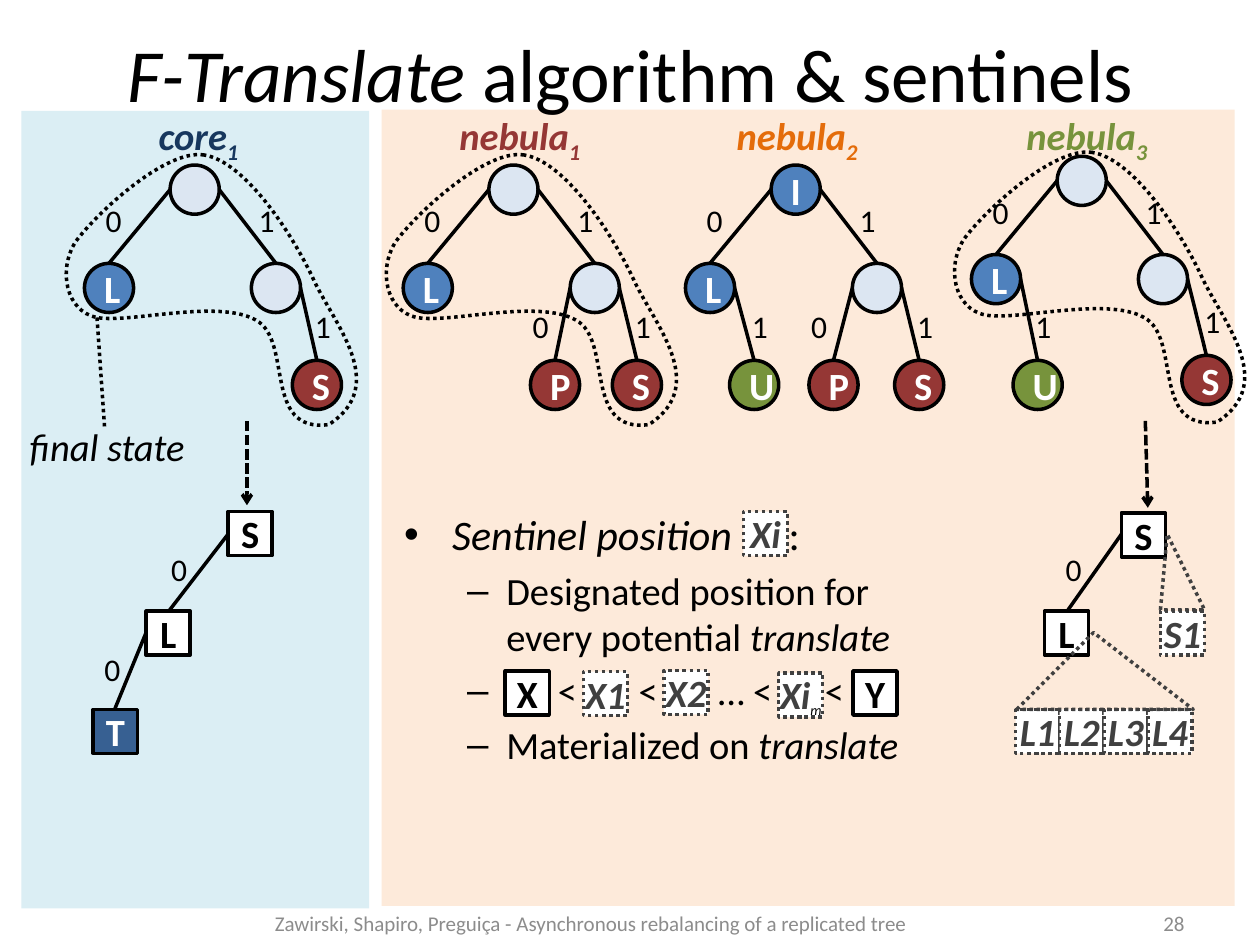
from dataclasses import dataclass

from lxml.etree import SubElement
from pptx import Presentation
from pptx.dml.color import RGBColor
from pptx.enum.dml import MSO_LINE_DASH_STYLE as Dash
from pptx.enum.shapes import MSO_CONNECTOR as Connector, MSO_SHAPE as Shape
from pptx.enum.text import MSO_ANCHOR as Anchor, MSO_AUTO_SIZE as AutoSize, PP_ALIGN as Align
from pptx.oxml.ns import qn
from pptx.util import Inches, Pt


@dataclass(frozen=True)
class Theme:
    """Colours and type sizes of the slide."""
    font: str = "Calibri"
    ink: str = "000000"
    paper: str = "FFFFFF"
    muted: str = "8C8C8C"
    core_panel: str = "DBEEF4"
    nebula_panel: str = "FDEADA"
    navy: str = "17375E"
    steel: str = "376092"
    blue: str = "4F81BD"
    pale: str = "DCE6F2"
    red: str = "953735"
    orange: str = "E46C0A"
    green: str = "77933C"
    sentinel: str = "404040"
    title: float = 42.9
    lead: float = 24
    body: float = 22
    edge: float = 18
    index: float = 14
    footer: float = 12
    stroke: float = 2


THEME = Theme()
NODE, BOX = 3.9, 3.5
NODE_COLORS = {"": THEME.pale, "L": THEME.blue, "I": THEME.blue,
               "S": THEME.red, "P": THEME.red, "U": THEME.green}
CURVE_SIZE = (23, 21.5)
FINAL_STATE = [(10.9, 0), (7.8, -.5), (2.2, 4.8), (.7, 6.9), (-.7, 9.1), (-.1, 12.4),
               (2.4, 12.9), (4.9, 13.4), (12, 11.4), (15, 13.1), (18, 14.7), (15.5, 22.1),
               (20.8, 21.4), (25.7, 18.2), (21.1, 13.3), (19.5, 9.7), (17.8, 6.1),
               (14.1, .5), (10.9, 0)]


def cells(*counts):
    """Turn columns or rows of the 100 by 75 grid into lengths."""
    return [Inches(count / 10) for count in counts]


def write(paragraph, *runs, size=THEME.body, color=THEME.ink, bold=False, italic=False,
          align=None, base=0, spread=0):
    """Add runs to a paragraph; a run is text or a pair of text and changed format."""
    paragraph.alignment = align
    for entry in runs:
        text, changes = (entry, {}) if isinstance(entry, str) else entry
        look = dict(size=size, color=color, bold=bold, italic=italic, base=base,
                    spread=spread) | changes
        run = paragraph.add_run()
        run.text = text
        font = run.font
        font.name, font.size = THEME.font, Pt(look["size"])
        font.bold, font.italic = look["bold"], look["italic"]
        font.color.rgb = RGBColor.from_string(look["color"])
        if look["base"]:
            run._r.get_or_add_rPr().set("baseline", str(look["base"] * 1000))
        if look["spread"]:
            run._r.get_or_add_rPr().set("spc", str(look["spread"] * 100))


def label(slide, area, *runs, anchor=Anchor.TOP, **look):
    """Place a text box and return its frame."""
    frame = slide.shapes.add_textbox(*cells(*area)).text_frame
    frame.word_wrap, frame.vertical_anchor = True, anchor
    write(frame.paragraphs[0], *runs, **look)
    return frame


def stroke(line, color=THEME.ink, dash=None):
    """Format an outline or a connector line."""
    line.color.rgb = RGBColor.from_string(color)
    line.width = Pt(THEME.stroke)
    if dash:
        line.dash_style = dash


def block(slide, kind, area, fill=None, line=THEME.ink, dash=None):
    """Draw a preset shape with flat fill and optional outline."""
    shape = slide.shapes.add_shape(kind, *cells(*area))
    shape.shadow.inherit = False
    if fill:
        shape.fill.solid()
        shape.fill.fore_color.rgb = RGBColor.from_string(fill)
    else:
        shape.fill.background()
    if line:
        stroke(shape.line, line, dash)
    else:
        shape.line.fill.background()
    return shape


def edge(slide, start, end, dash=None, arrow=False):
    """Connect two grid points."""
    link = slide.shapes.add_connector(Connector.STRAIGHT, *cells(*start, *end))
    stroke(link.line, dash=dash)
    if arrow:
        SubElement(link.line._get_or_add_ln(), qn("a:tailEnd"), type="arrow")
    SubElement(link._element.spPr, qn("a:effectLst"))


def node(slide, letter, x, y):
    """Draw a round tree node."""
    circle = block(slide, Shape.OVAL, (x, y, NODE, NODE), NODE_COLORS[letter])
    if letter:
        write(circle.text_frame.paragraphs[0], letter, color=THEME.paper, bold=True,
              align=Align.CENTER)


def box(slide, x, y, *runs, fill=THEME.paper, color=THEME.ink, sentinel=False):
    """Draw a square position, dotted when it is a sentinel."""
    ink = THEME.sentinel if sentinel else color
    square = block(slide, Shape.RECTANGLE, (x, y, BOX, BOX), fill,
                   THEME.sentinel if sentinel else THEME.ink,
                   Dash.ROUND_DOT if sentinel else None)
    frame = square.text_frame
    frame.margin_left = frame.margin_right = 0
    write(frame.paragraphs[0], *runs, color=ink, bold=True, italic=sentinel, align=Align.CENTER)


def bit(slide, digit, x, y):
    """Label an edge with its bit."""
    label(slide, (x, y, 3.4, 4), digit, size=THEME.edge)


def leaf(slide, letter, digit, parent, x, y):
    """Hang a leaf from the side of its parent that the bit selects."""
    side = NODE if digit == "1" else 0
    edge(slide, (parent[0] + side, parent[1] + NODE / 2), (x + NODE / 2, y))
    node(slide, letter, x, y)
    bit(slide, digit, x + (.8 if side else -.8), y - 4.7)


def tree(slide, x, y, leaves, root="", outline=None):
    """Draw a tree from its root; leaves map a letter to its offset from the root."""
    left, right = (x - 6.8, y + 7.8), (x + 6.45, y + 7.8)
    for digit, child, start, shift in (("0", left, x, .7), ("1", right, x + NODE, -.4)):
        edge(slide, (start, y + NODE / 2), (child[0] + NODE / 2, child[1]))
        bit(slide, digit, child[0] + shift, child[1] - 5.4)
    for letter, (across, down) in leaves.items():
        leaf(slide, letter, "0" if letter == "P" else "1",
             left if letter == "U" else right, x + across, y + down)
    for letter, spot in ((root, (x, y)), ("L", left), ("", right)):
        node(slide, letter, *spot)
    if outline:
        final_state(slide, x + outline[0], y + outline[1])


def final_state(slide, x, y):
    """Trace the dotted closed curve around the final state."""
    width, height = cells(*CURVE_SIZE)
    builder = slide.shapes.build_freeform(0, 0)
    builder.add_line_segments([(width, 0), (width, height)], close=True)
    curve = builder.convert_to_shape(*cells(x, y))
    outline = curve._element.find(".//" + qn("a:path"))
    for segment in list(outline):
        outline.remove(segment)
    start, *rest = FINAL_STATE
    pieces = [("a:moveTo", [start])]
    pieces += [("a:cubicBezTo", rest[first:first + 3]) for first in range(0, len(rest), 3)]
    for tag, points in pieces + [("a:close", [])]:
        segment = SubElement(outline, qn(tag))
        for across, down in (cells(*point) for point in points):
            SubElement(segment, qn("a:pt"), x=str(across), y=str(down))
    curve.shadow.inherit = False
    curve.fill.background()
    stroke(curve.line, dash=Dash.ROUND_DOT)


def bullet(paragraph, mark, margin, hang, size, tabs=()):
    """Give a paragraph its bullet, hanging indent and tab stops."""
    paragraph.space_before = Pt(size * .2)
    props = paragraph._p.get_or_add_pPr()
    props.set("marL", str(Inches(margin)))
    props.set("indent", str(-Inches(hang)))
    SubElement(props, qn("a:buFont"), typeface="Arial")
    SubElement(props, qn("a:buChar"), char=mark)
    if tabs:
        stops = SubElement(props, qn("a:tabLst"))
        for stop in tabs:
            SubElement(stops, qn("a:tab"), pos=str(Inches(stop)), algn="l")


def sentinel_notes(slide):
    """Explain sentinel positions and set their boxes in the text."""
    frame = label(slide, (31.1, 39.9, 42.2, 28.3), "Sentinel position", ("\t:", {"italic": False}),
                  size=THEME.lead, italic=True)
    bullet(frame.paragraphs[0], "•", .38, .38, THEME.lead, [3.05])
    slanted = ("translate", {"italic": True})
    for runs, tabs in ((("Designated position for every potential ", slanted), ()),
                       (("\t<\t<\t… <", (" <", {"spread": 25})), (1.22, 1.86, 2.49)),
                       (("Materialized on ", slanted), ())):
        paragraph = frame.add_paragraph()
        write(paragraph, *runs)
        bullet(paragraph, "–", .81, .31, THEME.body, tabs)
    index = ("m", dict(size=THEME.index, color=THEME.ink, bold=False, base=-25))
    box(slide, 59, 40.6, "Xi", sentinel=True)
    for x, y, runs in ((46.3, 53.3, ["X1"]), (52.7, 53.2, ["X2"]), (61.8, 53.4, ["Xi", index])):
        box(slide, x, y, *runs, sentinel=True)
    for x, letter in ((40.1, "X"), (67.7, "Y")):
        box(slide, x, 53.25, letter)


def subtrees(slide):
    """Draw the square subtrees below the core and the last nebula."""
    edge(slide, (19.6, 33.4), (19.6, 40.1), Dash.SQUARE_DOT, arrow=True)
    edge(slide, (90.9, 33.4), (91.1, 40.3), Dash.SQUARE_DOT, arrow=True)
    for start, end, digit in (((18.1, 42.4), (13.4, 48.5), (12.6, 43.2)),
                              ((11.6, 50.2), (9.1, 56.3), (7.3, 51.1)),
                              ((89, 42.4), (84.7, 48.5), (83.6, 43.2))):
        edge(slide, start, end)
        bit(slide, "0", *digit)
    for x, y, letter in ((18.1, 40.6, "S"), (11.6, 48.5, "L"), (89, 40.7, "S"), (82.9, 48.5, "L")):
        box(slide, x, y, letter)
    box(slide, 7.4, 56.3, "T", fill=THEME.steel, color=THEME.paper)
    for order in range(4):
        box(slide, 80.6 + order * BOX, 56.3, f"L{order + 1}", sentinel=True)
    box(slide, 92.1, 48.5, "S1", sentinel=True)
    for area, apex in (((80.7, 50.2, 14, 6.1), .435), ((92.1, 42.4, 3.5, 6), .154)):
        fan = block(slide, Shape.ISOSCELES_TRIANGLE, area, line=THEME.sentinel, dash=Dash.ROUND_DOT)
        fan.adjustments[0] = apex


def main():
    """Build the slide and save it."""
    deck = Presentation()
    deck.slide_width, deck.slide_height = cells(100, 75)
    slide = deck.slides.add_slide(deck.slide_layouts[5])
    block(slide, Shape.RECTANGLE, (30.3, 8.7, 67.7, 63.2), THEME.nebula_panel, None)
    block(slide, Shape.RECTANGLE, (1.7, 8.8, 27.6, 63.3), THEME.core_panel, None)
    title = slide.shapes.title
    slide.shapes._spTree.append(title._element)
    title.left, title.top, title.width, title.height = cells(0, 0, 100, 11.5)
    title.text_frame.auto_size = AutoSize.NONE
    title.text_frame.vertical_anchor = Anchor.MIDDLE
    write(title.text_frame.paragraphs[0], ("F-Translate ", {"italic": True}),
          "algorithm & sentinels", size=THEME.title, align=Align.CENTER)
    footer = dict(size=THEME.footer, color=THEME.muted, anchor=Anchor.MIDDLE)
    label(slide, (71.7, 71.3, 23.3, 4), "28", align=Align.RIGHT, **footer)
    label(slide, (2, 71.3, 89.8, 4), "Zawirski, Shapiro, Preguiça - Asynchronous rebalancing "
          "of a replicated tree", align=Align.CENTER, **footer)
    for x, width, name, number, color in ((11.4, 8.7, "core", "1", THEME.navy),
                                          (34.9, 12.7, "nebula", "1", THEME.red),
                                          (56.9, 12.7, "nebula", "2", THEME.orange),
                                          (79.9, 12.7, "nebula", "3", THEME.green)):
        label(slide, (x, 8.4, width, 4.7), name, (number, {"base": -25}), color=color,
              bold=True, italic=True, align=Align.CENTER)
    low = 15.5
    tree(slide, 13.5, 13.1, {"S": (9.7, low)}, outline=(-8.2, -.8))
    tree(slide, 38.8, 13.1, {"P": (3.3, low), "S": (9.8, low)}, outline=(-8.1, -.8))
    tree(slide, 61.2, 13.1, {"U": (-3.3, low), "P": (3, low), "S": (9.8, low)}, root="I")
    tree(slide, 83.9, 12.4, {"U": (-3.5, 16.2), "S": (9.9, 15.8)}, outline=(-8.1, -.3))
    edge(slide, (7.7, 25.2), (8.3, 33.9), Dash.ROUND_DOT)
    label(slide, (.4, 33.1, 16.2, 4.7), "final state", italic=True, align=Align.CENTER)
    subtrees(slide)
    sentinel_notes(slide)
    deck.save("out.pptx")


if __name__ == "__main__":
    main()
